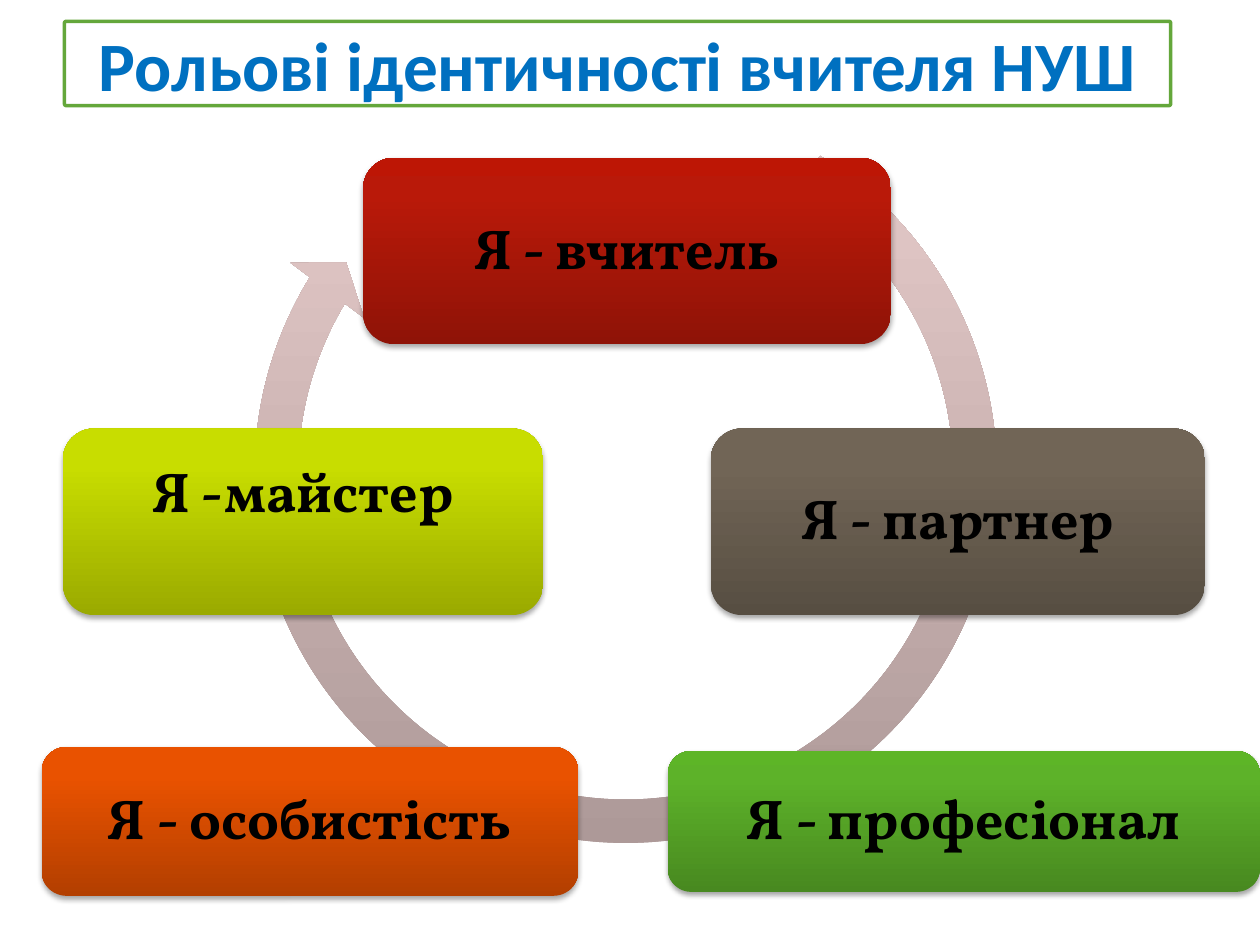
from copy import deepcopy

from lxml import etree
from pptx import Presentation
from pptx import util as u
from pptx.dml.color import RGBColor
from pptx.enum import shapes, text
from pptx.oxml import ns

THEME = {
    "title_font": {"name": "Calibri", "size": u.Pt(39.6), "bold": True},
    "role_font": {"name": "Vollkorn", "size": u.Pt(32), "bold": True},
    "title": "0070C0",
    "title_fill": "FFFFFF",
    "title_line": "64A73B",
    "role": "000000",
    "shadow": "000000",
    "ring": ("AB9796", "DEC4C3", "E0C4C4"),
    "red": ("8F1307", "B91909", "BD1605"),
    "brown": ("574E42", "716556", "726656"),
    "green": ("488920", "5DB229", "5DB527"),
    "orange": ("B33F00", "E95200", "EA5200"),
    "lime": ("9AAA00", "C8DD00", "C9DE00"),
}


def add_gradient_shape(page, kind, place, colors):
    shape = page.shapes.add_shape(kind, *map(u.Cm, place))
    shape.fill.gradient()
    stop_list = shape._element.spPr.find(".//" + ns.qn("a:gsLst"))
    stop_list.append(deepcopy(stop_list[-1]))
    for stop, position, color in zip(shape.fill.gradient_stops, (0, 0.8, 1), colors):
        stop.position = position
        stop.color.rgb = RGBColor.from_string(color)
    shape.fill.gradient_angle = 90
    shape.line.fill.background()
    shape.shadow.inherit = False
    return shape


def write_text(shape, words, font, color, margins):
    frame = shape.text_frame
    frame.word_wrap = True
    frame.vertical_anchor = text.MSO_ANCHOR.MIDDLE
    for name, value in margins.items():
        setattr(frame, "margin_" + name, u.Cm(value))
    para = frame.paragraphs[0]
    para.alignment = text.PP_ALIGN.CENTER
    span = para.add_run()
    span.text = words
    for name, value in font.items():
        setattr(span.font, name, value)
    span.font.color.rgb = RGBColor.from_string(color)
    return para


deck = Presentation()
deck.slide_width, deck.slide_height = u.Cm(25.4), u.Cm(19.05)
page = deck.slides.add_slide(deck.slide_layouts[6])

ring = add_gradient_shape(
    page, shapes.MSO_SHAPE.CIRCULAR_ARROW, (4.65, 1.55, 15.93, 15.93), THEME["ring"]
)
for index, value in enumerate((0.055, 3.307, 126.794, 180.956, 0.058)):
    ring.adjustments[index] = value

roles = [
    ("Я - вчитель", "red", (7.32, 3.18, 10.64, 3.76), 0.5),
    ("Я - партнер", "brown", (14.33, 8.64, 9.96, 3.76), 0.5),
    ("Я - професіонал", "green", (13.46, 15.14, 11.94, 2.84), 0.5),
    ("Я - особистість", "orange", (0.84, 15.06, 10.82, 3), 0.5),
    ("Я -майстер", "lime", (1.27, 8.64, 9.68, 3.76), 1.6),
]
for words, color, place, bottom in roles:
    box = add_gradient_shape(
        page, shapes.MSO_SHAPE.ROUNDED_RECTANGLE, place, THEME[color]
    )
    effects = box._element.spPr.find(ns.qn("a:effectLst"))
    shadow = etree.SubElement(
        effects, ns.qn("a:outerShdw"), blurRad=str(u.Pt(3.1)), dist=str(u.Pt(1.8)),
        dir="5400000", rotWithShape="0",
    )
    tint = etree.SubElement(shadow, ns.qn("a:srgbClr"), val=THEME["shadow"])
    etree.SubElement(tint, ns.qn("a:alpha"), val="35000")
    margins = {"left": 0.5, "right": 0.5, "top": 0.5, "bottom": bottom}
    para = write_text(box, words, THEME["role_font"], THEME["role"], margins)
    para.line_spacing = 0.9

title = page.shapes.add_shape(
    shapes.MSO_SHAPE.ROUNDED_RECTANGLE, *map(u.Cm, (1.3, 0.43, 22.3, 1.7))
)
title.adjustments[0] = 0.02
title.fill.solid()
title.fill.fore_color.rgb = RGBColor.from_string(THEME["title_fill"])
title.line.color.rgb = RGBColor.from_string(THEME["title_line"])
title.line.width = u.Pt(2)
title.shadow.inherit = False
write_text(
    title, "Рольові ідентичності вчителя НУШ", THEME["title_font"], THEME["title"],
    {"left": 0.25, "right": 0.25, "top": 0.13, "bottom": 0.13},
)

deck.save("out.pptx")
